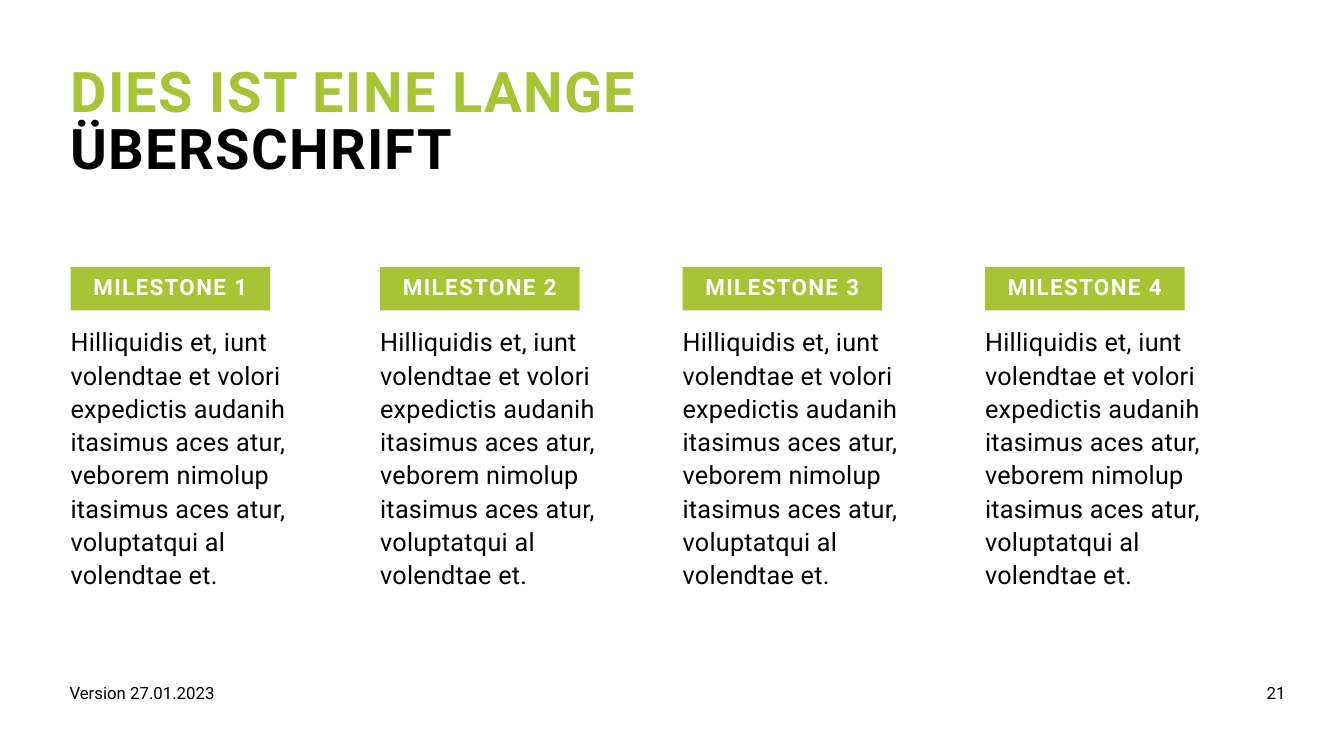
from dataclasses import dataclass

from pptx import Presentation
from pptx.dml.color import RGBColor
from pptx.enum.shapes import MSO_SHAPE
from pptx.enum.text import MSO_ANCHOR, PP_ALIGN
from pptx.util import Inches, Pt

RECTANGLE = MSO_SHAPE.RECTANGLE
TOP, MIDDLE = MSO_ANCHOR.TOP, MSO_ANCHOR.MIDDLE
LEFT, CENTER, RIGHT = PP_ALIGN.LEFT, PP_ALIGN.CENTER, PP_ALIGN.RIGHT

FONT = "Roboto"
COLORS = {"green": "A8C434", "black": "000000", "white": "FFFFFF"}
BODY = (
    "Hilliquidis et, iunt volendtae et volori expedictis audanih itasimus "
    "aces atur, veborem nimolup itasimus aces atur, voluptatqui al volendtae et."
)


@dataclass(frozen=True)
class TextStyle:
    size: float
    color: str = "black"
    bold: bool = False
    tracking: float = 0  # points between letters
    line_spacing: float = 1.0
    align: PP_ALIGN = LEFT
    anchor: MSO_ANCHOR = TOP


@dataclass(frozen=True)
class Milestone:
    label: str
    left: float
    body: str = BODY


TITLE = TextStyle(40, "green", True, 1, 0.85)
LABEL = TextStyle(16, "white", True, 1, 0.85, CENTER, MIDDLE)
COLUMN = TextStyle(18, tracking=0.2, line_spacing=1.1)
FOOTER = TextStyle(12)
PAGE_NUMBER = TextStyle(12, align=RIGHT)

MILESTONES = [
    Milestone(f"MILESTONE {number}", left)
    for number, left in enumerate((0.7, 3.77, 6.77, 9.77), start=1)
]


def rgb(name: str) -> RGBColor:
    return RGBColor.from_string(COLORS[name])


def format_span(span, style: TextStyle, color: str) -> None:
    span.font.name = FONT
    span.font.size = Pt(style.size)
    span.font.bold = style.bold
    span.font.color.rgb = rgb(color)
    if style.tracking:
        span.font._element.set("spc", str(round(style.tracking * 100)))


def write(box, text: str, style: TextStyle):
    """Fill a box with one styled paragraph and return the paragraph."""
    frame = box.text_frame
    frame.text = text
    frame.word_wrap = True
    frame.vertical_anchor = style.anchor
    frame.margin_left = frame.margin_right = 0
    frame.margin_top = frame.margin_bottom = 0
    para = frame.paragraphs[0]
    para.alignment = style.align
    para.line_spacing = style.line_spacing
    format_span(para.runs[0], style, style.color)
    return para


def add_text(page, left: float, top: float, width: float, height: float,
             text: str, style: TextStyle):
    box = page.shapes.add_textbox(
        Inches(left), Inches(top), Inches(width), Inches(height))
    return write(box, text, style)


def add_milestone(page, milestone: Milestone) -> None:
    add_text(page, milestone.left, 3.21, 2.41, 3.09, milestone.body, COLUMN)
    label = page.shapes.add_shape(
        RECTANGLE, Inches(milestone.left), Inches(2.65), Inches(1.98), Inches(0.43))
    label.shadow.inherit = False
    label.fill.solid()
    label.fill.fore_color.rgb = rgb("green")
    label.line.fill.background()
    write(label, milestone.label, LABEL)


def main() -> None:
    deck = Presentation()
    deck.slide_width, deck.slide_height = Inches(13.33), Inches(7.5)
    page = deck.slides.add_slide(deck.slide_layouts[6])

    # Footer
    add_text(page, 10.6, 6.77, 2.15, 0.4, "21", PAGE_NUMBER)
    add_text(page, 0.69, 6.77, 8.23, 0.4, "Version 27.01.2023", FOOTER)

    # Two-colour title
    title = add_text(page, 0.7, 0.66, 8.2, 1.12, "DIES IST EINE LANGE ", TITLE)
    second_span = title.add_run()
    second_span.text = "ÜBERSCHRIFT"
    format_span(second_span, TITLE, "black")

    # Milestone columns
    for milestone in MILESTONES:
        add_milestone(page, milestone)

    deck.save("out.pptx")


if __name__ == "__main__":
    main()
